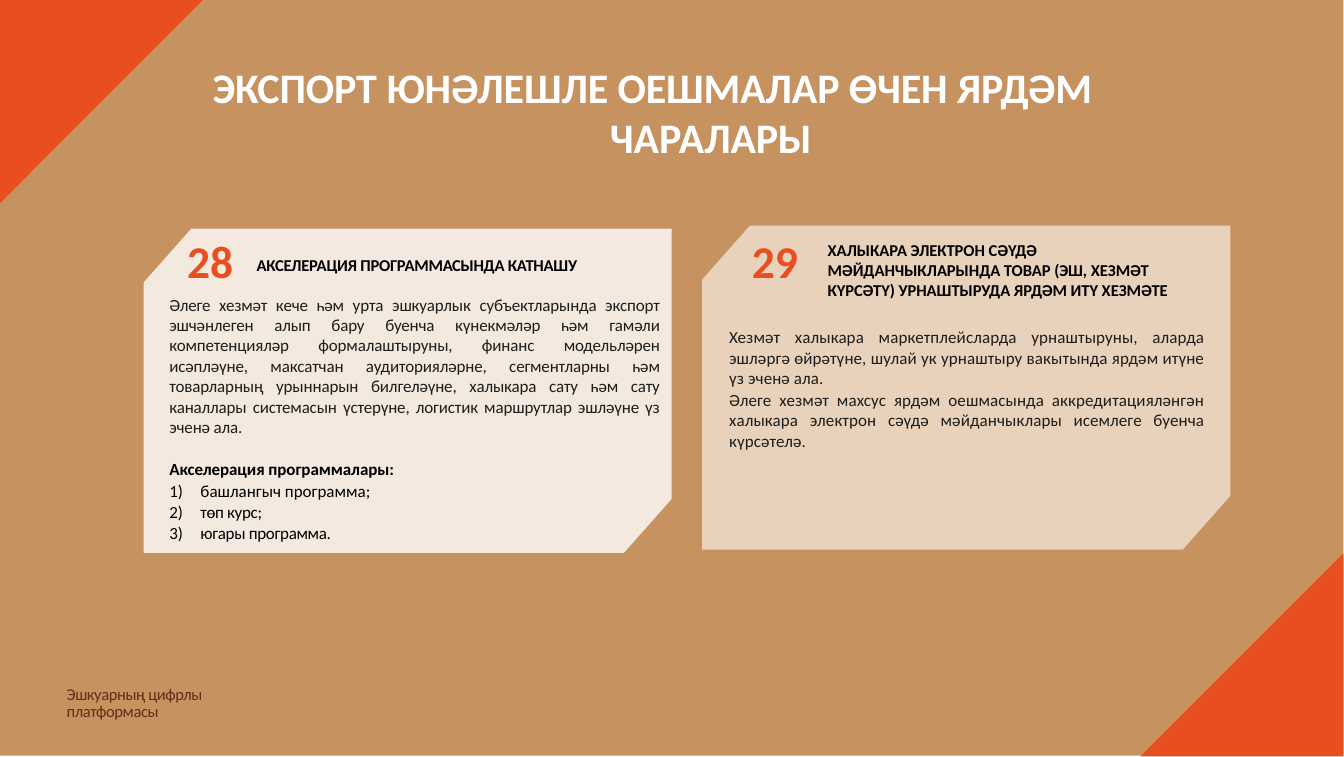
from dataclasses import dataclass

from lxml.etree import SubElement
from pptx import Presentation
from pptx.dml.color import RGBColor
from pptx.enum.shapes import MSO_SHAPE
from pptx.enum.text import MSO_ANCHOR, PP_ALIGN
from pptx.oxml.ns import qn
from pptx.util import Inches, Pt


@dataclass(frozen=True)
class Theme:
    """Colours, font and type sizes of the slide."""
    font: str = "Calibri"
    sand: str = "C59260"
    flame: str = "E84E20"
    cream: str = "F4E9DF"
    beige: str = "E8D2BB"
    white: str = "FFFFFF"
    black: str = "000000"
    ink: str = "1D1D1B"
    brown: str = "672C17"
    title: float = 49.5
    number: float = 53.5
    head: float = 19.5
    body: float = 20


THEME = Theme()
WIDE, HIGH = 21.98, 12.37
CORNER = 3.32
CARD_W, CARD_H = 8.64, 5.3
CUT_X, CUT_Y = 0.78, 0.88


def paint(shape, color):
    """Give a shape a flat fill with no line or shadow."""
    shape.shadow.inherit = False
    shape.fill.solid()
    shape.fill.fore_color.rgb = RGBColor.from_string(color)
    shape.line.fill.background()


def outline(slide, points, color):
    """Draw a closed polygon through points in inches."""
    spots = [(Inches(x), Inches(y)) for x, y in points]
    form = slide.shapes.build_freeform(*spots[0])
    form.add_line_segments(spots[1:], close=True)
    paint(form.convert_to_shape(), color)


def card(slide, left, top, color):
    """Draw a panel with its top left and bottom right corners cut."""
    right, base = left + CARD_W, top + CARD_H
    outline(slide, [(right, top), (left + CUT_X, top), (left, top + CUT_Y),
                    (left, base), (right - CUT_X, base),
                    (right, base - CUT_Y)], color)


def frame(slide, left, top, width, height, inset=0.01):
    """Add an empty wrapping text box and return its text frame."""
    box = slide.shapes.add_textbox(*map(Inches, (left, top, width, height)))
    area = box.text_frame
    area.word_wrap = True
    area.vertical_anchor = MSO_ANCHOR.TOP
    area.margin_left = area.margin_right = area.margin_bottom = 0
    area.margin_top = Inches(inset)
    return area


def write(area, text, size, color, bold=False, track=0, align=PP_ALIGN.LEFT,
          before=0, leading=1.0, hang=None, count=False):
    """Add one paragraph, with an optional hanging indent and number."""
    first = not area.paragraphs[0].runs
    para = area.paragraphs[0] if first else area.add_paragraph()
    props = para._p.get_or_add_pPr()
    if hang:
        props.set("marL", str(Inches(hang)))
        props.set("indent", str(-Inches(hang)))
    if count:
        SubElement(props, qn("a:buAutoNum"), type="arabicParenR")
    para.alignment = align
    para.line_spacing = leading
    para.space_before = Pt(0 if first else before)
    run = para.add_run()
    run.text = text
    font = run.font
    font.name, font.size, font.bold = THEME.font, Pt(size), bold
    font.color.rgb = RGBColor.from_string(color)
    run._r.get_or_add_rPr().set("spc", str(round(track * 100)))


def number(slide, left, text):
    """Write the large number of a card."""
    write(frame(slide, left, 3.81, 0.79, 0.92), text, THEME.number,
          THEME.flame, bold=True, track=0.2)


def header(slide, box, text, inset, track):
    """Write the bold heading of a card."""
    write(frame(slide, *box, inset), text, THEME.head, THEME.black,
          bold=True, track=track)


def backdrop(slide):
    """Draw the sand ground and its two corner triangles."""
    ground = slide.shapes.add_shape(MSO_SHAPE.RECTANGLE, 0, 0,
                                    Inches(WIDE), Inches(12.36))
    paint(ground, THEME.sand)
    outline(slide, [(0, 0), (CORNER, 0), (0, CORNER)], THEME.flame)
    outline(slide, [(WIDE, HIGH - CORNER), (WIDE, HIGH),
                    (WIDE - CORNER, HIGH)], THEME.flame)


def course(slide):
    """Build card 28 on the training programmes."""
    card(slide, 2.35, 3.74, THEME.cream)
    number(slide, 3.06, "28")
    header(slide, (4.2, 4.16, 6.16, 0.34),
           "АКСЕЛЕРАЦИЯ ПРОГРАММАСЫНДА КАТНАШУ", 0.01, -0.33)
    area = frame(slide, 2.77, 4.8, 8.02, 4.48)
    write(area, "Әлеге хезмәт кече һәм урта эшкуарлык субъектларында экспорт "
          "эшчәнлеген алып бару буенча күнекмәләр һәм гамәли компетенцияләр "
          "формалаштыруны, финанс модельләрен исәпләүне, максатчан "
          "аудиторияләрне, сегментларны һәм товарларның урыннарын билгеләүне, "
          "халыкара сату һәм сату каналлары системасын үстерүне, логистик "
          "маршрутлар эшләүне үз эченә ала.",
          THEME.body, THEME.ink, track=-0.2, align=PP_ALIGN.JUSTIFY)
    write(area, "Акселерация программалары:", THEME.body, THEME.black,
          bold=True, track=-0.1, before=26)
    for name, track in (("башлангыч программа;", 0), ("төп курс;", -0.4),
                        ("югары программа.", -0.4)):
        write(area, name, THEME.body, THEME.black, track=track, before=0.9,
              leading=1.01, hang=0.51, count=True)


def market(slide):
    """Build card 29 on the trading sites."""
    card(slide, 11.49, 3.69, THEME.beige)
    number(slide, 12.3, "29")
    header(slide, (13.54, 3.84, 5.83, 1.06),
           "ХАЛЫКАРА ЭЛЕКТРОН СӘҮДӘ МӘЙДАНЧЫКЛАРЫНДА ТОВАР (ЭШ, ХЕЗМӘТ "
           "КҮРСӘТҮ) УРНАШТЫРУДА ЯРДӘМ ИТҮ ХЕЗМӘТЕ", 0.08, -0.1)
    area = frame(slide, 11.93, 5.33, 7.78, 2.07)
    for text in ("Хезмәт халыкара маркетплейсларда урнаштыруны, аларда "
                 "эшләргә өйрәтүне, шулай ук урнаштыру вакытында ярдәм "
                 "итүне үз эченә ала.",
                 "Әлеге хезмәт махсус ярдәм оешмасында "
                 "аккредитацияләнгән халыкара электрон сәүдә мәйданчыклары "
                 "исемлеге буенча күрсәтелә."):
        write(area, text, THEME.body, THEME.ink, track=0.1,
              align=PP_ALIGN.JUSTIFY, before=0.9, leading=1.01)


def main():
    """Build and save the slide."""
    deck = Presentation()
    deck.slide_width, deck.slide_height = Inches(21.99), Inches(12.38)
    slide = deck.slides.add_slide(deck.slide_layouts[6])
    backdrop(slide)
    write(frame(slide, 3.48, 0.99, 17.35, 1.68),
          "ЭКСПОРТ ЮНӘЛЕШЛЕ ОЕШМАЛАР ӨЧЕН ЯРДӘМ ЧАРАЛАРЫ",
          THEME.title, THEME.white, bold=True, track=-0.1, hang=6.5)
    course(slide)
    market(slide)
    write(frame(slide, 1.09, 11.22, 2.41, 0.57, 0.03),
          "Эшкуарның цифрлы платформасы", THEME.head, THEME.brown,
          track=-0.5, leading=Pt(19.2))
    deck.save("out.pptx")


if __name__ == "__main__":
    main()
